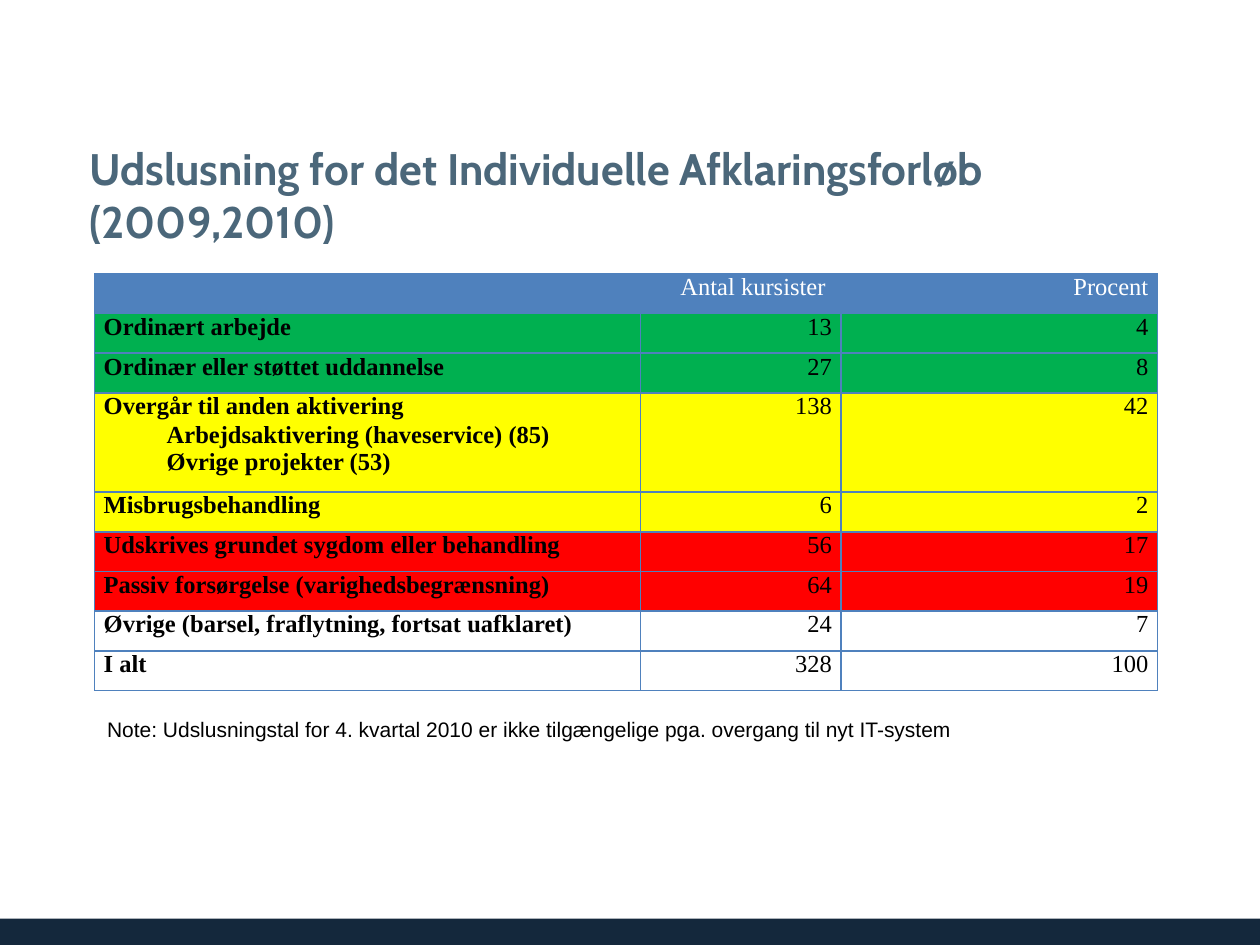
from dataclasses import dataclass

from lxml import etree
from pptx import Presentation
from pptx.dml.color import RGBColor
from pptx.enum.shapes import MSO_SHAPE
from pptx.enum.text import MSO_ANCHOR, PP_ALIGN
from pptx.oxml.ns import qn
from pptx.util import Cm, Pt

RECTANGLE = MSO_SHAPE.RECTANGLE
TOP, MIDDLE = MSO_ANCHOR.TOP, MSO_ANCHOR.MIDDLE
LEFT, RIGHT, JUSTIFY = PP_ALIGN.LEFT, PP_ALIGN.RIGHT, PP_ALIGN.JUSTIFY
BLANK_LAYOUT = 6


@dataclass(frozen=True)
class Theme:
    bar: str = "14283C"
    heading: str = "4B677A"
    grid: str = "4F81BD"
    ink: str = "000000"
    white: str = "FFFFFF"
    green: str = "00B050"
    yellow: str = "FFFF00"
    red: str = "FF0000"
    heading_font: str = "Cabin"
    table_font: str = "Times New Roman"
    note_font: str = "Arial"
    heading_size: float = 25.2
    table_size: float = 14
    note_size: float = 12


THEME = Theme()

# Outcome, number of participants, percent, row colour
OUTCOMES = [
    (["Ordinært arbejde"], "13", "4", THEME.green),
    (["Ordinær eller støttet uddannelse"], "27", "8", THEME.green),
    (["Overgår til anden aktivering", "Arbejdsaktivering (haveservice) (85)",
      "Øvrige projekter (53)"], "138", "42", THEME.yellow),
    (["Misbrugsbehandling"], "6", "2", THEME.yellow),
    (["Udskrives grundet sygdom eller behandling"], "56", "17", THEME.red),
    (["Passiv forsørgelse (varighedsbegrænsning)"], "64", "19", THEME.red),
    (["Øvrige (barsel, fraflytning, fortsat uafklaret)"], "24", "7", THEME.white),
    (["I alt"], "328", "100", THEME.white),
]
COLUMN_WIDTHS = (11, 4.04, 6.38)
ROW_HEIGHT, TALL_ROW_HEIGHT = 0.8, 2


def apply(target, values):
    for name, value in values.items():
        setattr(target, name, value)


class SlideBuilder:
    def __init__(self, slide, theme):
        self.slide = slide
        self.theme = theme

    def styled_run(self, paragraph, text, font, size, color, bold=False):
        run = paragraph.add_run()
        run.text = text
        apply(run.font, {"name": font, "size": Pt(size), "bold": bold})
        run.font.color.rgb = RGBColor.from_string(color)

    def bar(self, *box):
        bar = self.slide.shapes.add_shape(RECTANGLE, *map(Cm, box))
        bar.shadow.inherit = False
        bar.fill.solid()
        bar.fill.fore_color.rgb = RGBColor.from_string(self.theme.bar)
        bar.line.fill.background()

    def text(self, box, text, style, frame_format):
        frame = self.slide.shapes.add_textbox(*map(Cm, box)).text_frame
        apply(frame, {"word_wrap": True, **frame_format})
        self.styled_run(frame.paragraphs[0], text, *style)

    def borders(self, cell):
        properties = cell._tc.get_or_add_tcPr()
        for side in ("a:lnL", "a:lnR", "a:lnT", "a:lnB"):
            line = etree.SubElement(properties, qn(side), w=str(Pt(1)))
            fill = etree.SubElement(line, qn("a:solidFill"))
            etree.SubElement(fill, qn("a:srgbClr"), val=self.theme.grid)

    def cell(self, cell, lines, fill, color, align, bold=False):
        theme = self.theme
        self.borders(cell)
        cell.fill.solid()
        cell.fill.fore_color.rgb = RGBColor.from_string(fill)
        apply(cell, {"margin_left": Cm(0.18), "margin_right": Cm(0.18),
                     "margin_top": 0, "margin_bottom": 0,
                     "vertical_anchor": TOP})
        for index, line in enumerate(lines):
            if index == 0:
                paragraph = cell.text_frame.paragraphs[0]
                apply(paragraph, {"alignment": align, "space_after": Pt(1)})
            else:
                # Sub-items are indented below the outcome they belong to
                paragraph = cell.text_frame.add_paragraph()
                apply(paragraph, {"alignment": JUSTIFY, "level": 1})
                properties = paragraph._p.get_or_add_pPr()
                properties.set("marL", str(Cm(1.98)))
                properties.set("indent", str(-Cm(0.71)))
            self.styled_run(paragraph, line, theme.table_font,
                            theme.table_size, color, bold)

    def outcome_table(self, left, top, headers, outcomes):
        theme = self.theme
        heights = [ROW_HEIGHT] + [
            TALL_ROW_HEIGHT if len(labels) > 1 else ROW_HEIGHT
            for labels, *_ in outcomes]
        table = self.slide.shapes.add_table(
            len(heights), len(COLUMN_WIDTHS), Cm(left), Cm(top),
            Cm(sum(COLUMN_WIDTHS)), Cm(sum(heights))).table
        apply(table, {"first_row": False, "horz_banding": False})
        for column, width in zip(table.columns, COLUMN_WIDTHS):
            column.width = Cm(width)
        for row, height in zip(table.rows, heights):
            row.height = Cm(height)

        # Header row
        for column, header in enumerate(headers):
            self.cell(table.cell(0, column), [header] if header else [],
                      theme.grid, theme.white, RIGHT)
        # Outcome rows
        for row, (labels, count, percent, fill) in enumerate(outcomes, 1):
            self.cell(table.cell(row, 0), labels, fill, theme.ink, LEFT, True)
            for column, figure in enumerate((count, percent), 1):
                self.cell(table.cell(row, column), [figure], fill, theme.ink, RIGHT)


def main():
    presentation = Presentation()
    apply(presentation, {"slide_width": Cm(25.4), "slide_height": Cm(19.05)})
    slide = presentation.slides.add_slide(presentation.slide_layouts[BLANK_LAYOUT])
    builder = SlideBuilder(slide, THEME)

    # Footer bar
    builder.bar(0, 18.52, 25.4, 0.53)
    # Heading
    builder.text((1.7, 2.97, 22.43, 1.91),
                 "Udslusning for det Individuelle Afklaringsforløb (2009,2010)",
                 (THEME.heading_font, THEME.heading_size, THEME.heading, True),
                 {"vertical_anchor": MIDDLE, "margin_left": Cm(0.1),
                  "margin_right": Cm(0.2)})
    # Outcomes
    builder.outcome_table(1.91, 5.52, ("", "Antal kursister ", "Procent"), OUTCOMES)
    # Note
    builder.text((1.91, 14.33, 21.41, 0.76),
                 "Note: Udslusningstal for 4. kvartal 2010 er ikke tilgængelige "
                 "pga. overgang til nyt IT-system",
                 (THEME.note_font, THEME.note_size, THEME.ink),
                 {"vertical_anchor": TOP})
    presentation.save("out.pptx")


if __name__ == "__main__":
    main()
